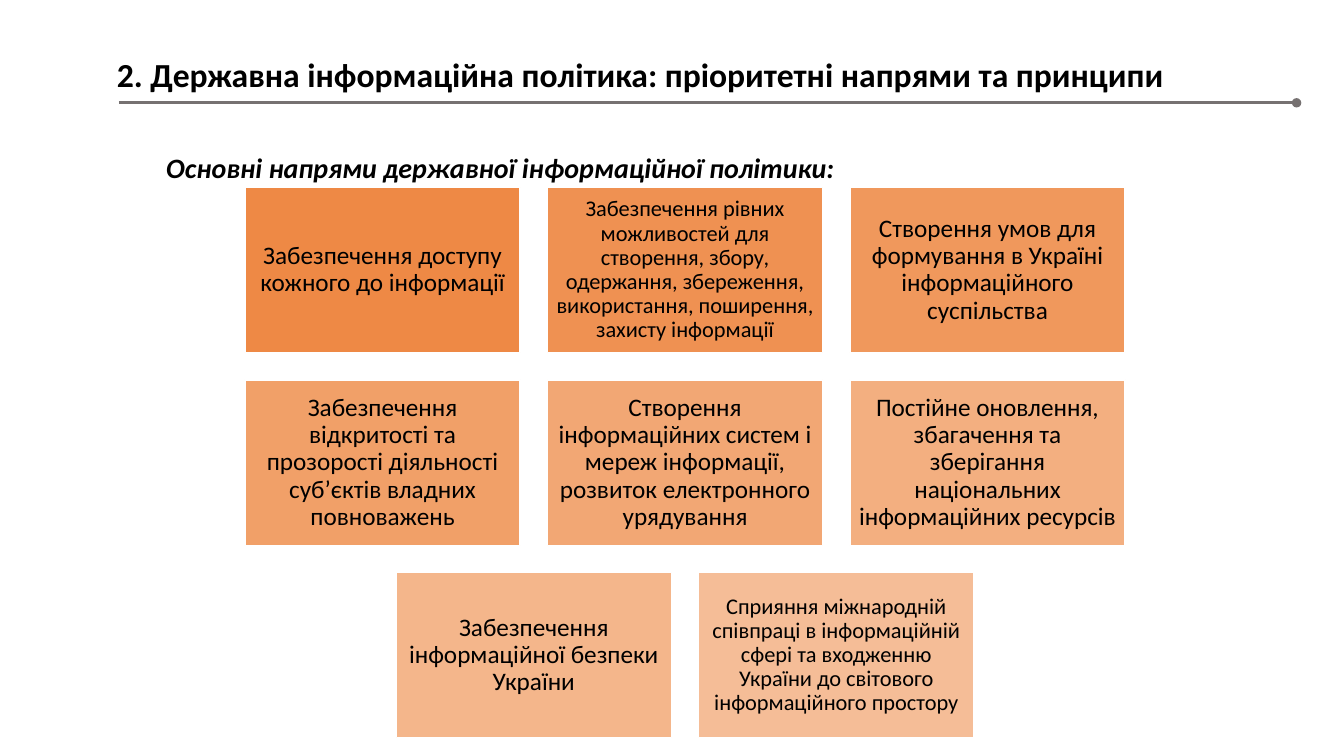
from dataclasses import dataclass

from lxml.etree import SubElement
from pptx import Presentation
from pptx.dml.color import RGBColor
from pptx.enum.shapes import MSO_CONNECTOR as Connector, MSO_SHAPE as Shape
from pptx.enum.text import MSO_ANCHOR as Anchor, PP_ALIGN as Align
from pptx.oxml.ns import qn
from pptx.util import Inches, Pt


@dataclass(frozen=True)
class Theme:
    font: str = "Calibri"
    text: RGBColor = RGBColor(0, 0, 0)
    rule: RGBColor = RGBColor(0x76, 0x71, 0x71)
    tile: RGBColor = RGBColor(0xED, 0x7D, 0x31)
    border: RGBColor = RGBColor(0xFF, 0xFF, 0xFF)
    title_size: int = 24
    heading_size: int = 20
    tile_size: int = 18
    dense_tile_size: int = 16


THEME = Theme()
COLUMNS = 3
TILE_WIDTH, TILE_HEIGHT, GAP = 2.73, 1.64, 0.27
FIRST_OPACITY, LAST_OPACITY = 90, 50

TITLE = "2. Державна інформаційна політика: пріоритетні напрями та принципи"
HEADING = "Основні напрями державної інформаційної політики:"
DIRECTIONS = [
    ("Забезпечення доступу кожного до інформації", THEME.tile_size),
    ("Забезпечення рівних можливостей для створення, збору, одержання, "
     "збереження, використання, поширення, захисту інформації", THEME.dense_tile_size),
    ("Створення умов для формування в Україні інформаційного суспільства", THEME.tile_size),
    ("Забезпечення відкритості та прозорості діяльності суб’єктів владних "
     "повноважень", THEME.tile_size),
    ("Створення інформаційних систем і мереж інформації, розвиток "
     "електронного урядування", THEME.tile_size),
    ("Постійне оновлення, збагачення та зберігання національних "
     "інформаційних ресурсів", THEME.tile_size),
    ("Забезпечення інформаційної безпеки України", THEME.tile_size),
    ("Сприяння міжнародній співпраці в інформаційній сфері та входженню "
     "України до світового інформаційного простору", THEME.dense_tile_size),
]


def add_span(para, text, size, bold=False, italic=False):
    span = para.add_run()
    span.text = text
    font = span.font
    font.name, font.size = THEME.font, Pt(size)
    font.bold, font.italic = bold, italic
    font.color.rgb = THEME.text


def add_text_box(page, left, top, width, height):
    box = page.shapes.add_textbox(*map(Inches, (left, top, width, height)))
    box.text_frame.word_wrap = True
    return box.text_frame.paragraphs[0]


def add_title(page, left, top, width, height):
    para = add_text_box(page, left, top, width, height)
    add_span(para, TITLE, THEME.title_size, bold=True)

    # Rule under the title, ending in a dot
    start, end, level = left + 0.12, left + width + 0.18, top + height + 0.03
    rule = page.shapes.add_connector(
        Connector.STRAIGHT, *map(Inches, (start, level, end, level)))
    rule.line.color.rgb = THEME.rule
    rule.line.width = Pt(2.25)
    SubElement(rule.line._get_or_add_ln(), qn("a:tailEnd"), type="oval")
    SubElement(rule._element.spPr, qn("a:effectLst"))


def add_heading(page, left, top, width, height):
    para = add_text_box(page, left, top, width, height)
    para.alignment = Align.JUSTIFY
    para.line_spacing = 1.15
    para.space_after = Pt(8)
    para._p.get_or_add_pPr().set("indent", str(Inches(0.49)))
    add_span(para, HEADING, THEME.heading_size, bold=True, italic=True)


def add_tile(page, left, top, text, size, opacity):
    tile = page.shapes.add_shape(
        Shape.RECTANGLE, *map(Inches, (left, top, TILE_WIDTH, TILE_HEIGHT)))
    tile.shadow.inherit = False
    tile.fill.solid()
    tile.fill.fore_color.rgb = THEME.tile
    color = tile._element.spPr.find(qn("a:solidFill"))[0]
    SubElement(color, qn("a:alpha"), val=str(round(opacity * 1000)))
    tile.line.color.rgb = THEME.border
    tile.line.width = Pt(1)

    frame = tile.text_frame
    frame.word_wrap = True
    frame.vertical_anchor = Anchor.MIDDLE
    frame.margin_left = frame.margin_right = Inches(0.07)
    frame.margin_top = frame.margin_bottom = Inches(0.07)
    para = frame.paragraphs[0]
    para.alignment = Align.CENTER
    para.line_spacing = 0.9
    add_span(para, text, size)


def add_directions(page, left, top, width):
    fade = (FIRST_OPACITY - LAST_OPACITY) / (len(DIRECTIONS) - 1)
    for index, (text, size) in enumerate(DIRECTIONS):
        row, column = divmod(index, COLUMNS)
        # A short last row is centred
        count = min(COLUMNS, len(DIRECTIONS) - row * COLUMNS)
        row_width = count * (TILE_WIDTH + GAP) - GAP
        add_tile(page,
                 left + (width - row_width) / 2 + column * (TILE_WIDTH + GAP),
                 top + row * (TILE_HEIGHT + GAP),
                 text, size, FIRST_OPACITY - fade * index)


def main():
    deck = Presentation()
    deck.slide_width, deck.slide_height = Inches(13.33), Inches(7.5)
    page = deck.slides.add_slide(deck.slide_layouts[6])
    add_title(page, 1.06, 0.49, 11.62, 0.5)
    add_heading(page, 1.06, 1.39, 11.46, 0.47)
    add_directions(page, 2.43, 1.86, 8.73)
    deck.save("out.pptx")


if __name__ == "__main__":
    main()
